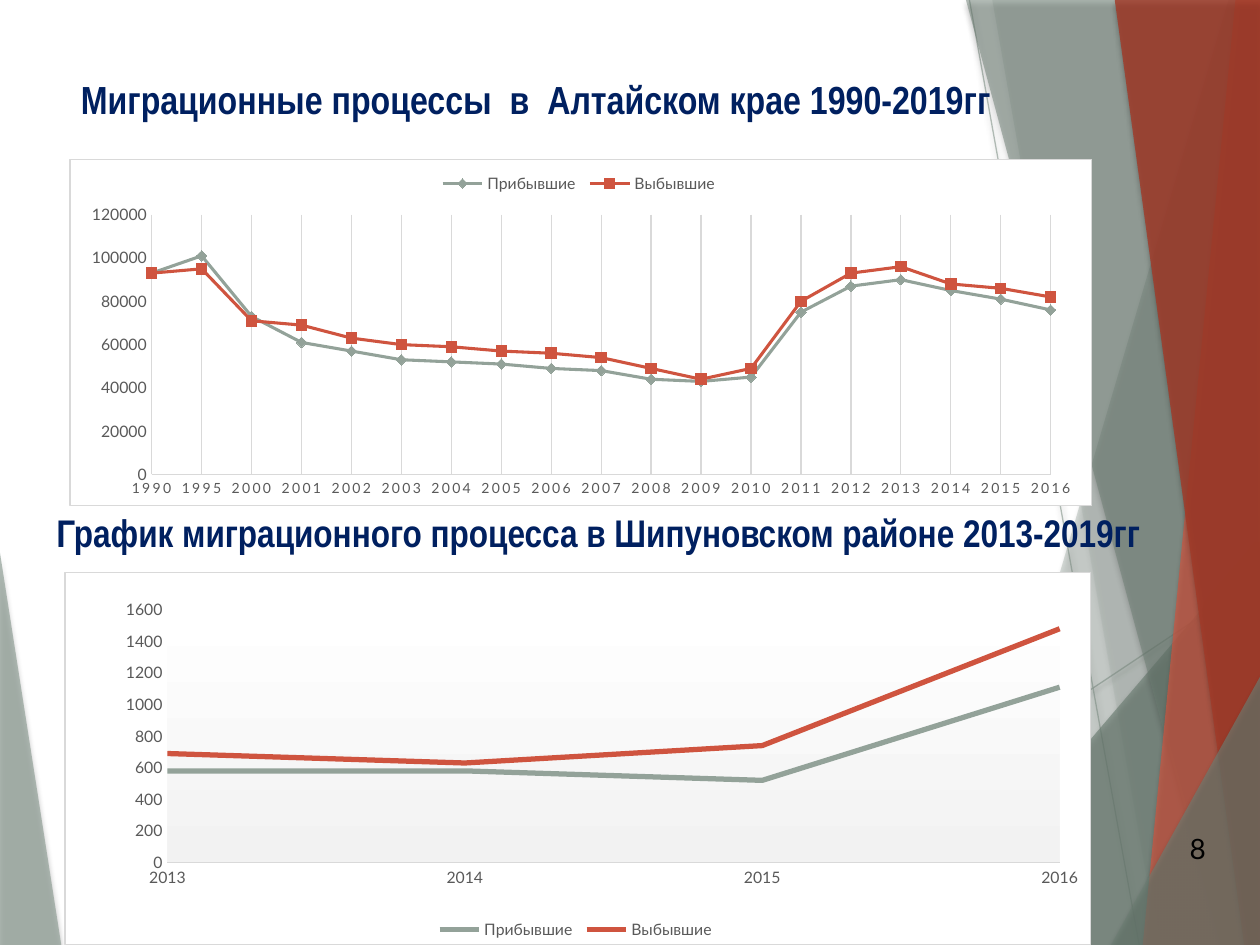
from lxml import etree
from pptx import Presentation
from pptx import util as u
from pptx.chart.data import CategoryChartData
from pptx.dml.color import RGBColor
from pptx.enum import chart as ch, shapes, text
from pptx.oxml import parse_xml
from pptx.oxml.ns import qn

Pt = u.Pt
NS = ('xmlns:a="http://schemas.openxmlformats.org/drawingml/2006/main" '
      'xmlns:c="http://schemas.openxmlformats.org/drawingml/2006/chart"')
SAGE = RGBColor(0x93, 0xA2, 0x99)
MOSS = RGBColor(0x6B, 0x7D, 0x72)
RED = RGBColor(0xCF, 0x54, 0x3F)
RUST = RGBColor(0xA2, 0x3A, 0x28)
NAVY = RGBColor(0x00, 0x20, 0x60)
BLACK = RGBColor(0, 0, 0)
GREY = RGBColor(0x59, 0x59, 0x59)
PALE = RGBColor(0xD9, 0xD9, 0xD9)
FACETS = [
    (SAGE, 70, [(0, 316), (35, 540), (0, 540)]),
    (SAGE, 36, [(702, 0), (543, 540), (721, 540), (721, 0)]),
    (SAGE, 20, [(567, 0), (662, 540), (721, 540), (721, 0)]),
    (MOSS, 66, [(523, 540), (720, 309), (721, 540)]),
    (MOSS, 50, [(552, 0), (698, 540), (721, 540), (721, 0)]),
    (RED, 70, [(706, 0), (653, 540), (721, 540), (720, 0)]),
    (RUST, 82, [(637, 0), (711, 540), (721, 540), (720, 0)]),
    (MOSS, 66, [(635, 540), (721, 385), (721, 540)]),
]
RAYS = [(404, 540, 721, 329), (554, 0, 651, 540)]
REGION = {
    "1990": (93000, 93000), "1995": (101000, 95000), "2000": (73000, 71000),
    "2001": (61000, 69000), "2002": (57000, 63000), "2003": (53000, 60000),
    "2004": (52000, 59000), "2005": (51000, 57000), "2006": (49000, 56000),
    "2007": (48000, 54000), "2008": (44000, 49000), "2009": (43000, 44000),
    "2010": (45000, 49000), "2011": (75000, 80000), "2012": (87000, 93000),
    "2013": (90000, 96000), "2014": (85000, 88000), "2015": (81000, 86000),
    "2016": (76000, 82000),
}
COUNTY = {"2013": (580, 690), "2014": (580, 630),
          "2015": (520, 740), "2016": (1110, 1480)}


def fade(shape, alpha):
    for clr in shape._element.spPr.iter(qn("a:srgbClr")):
        etree.SubElement(clr, qn("a:alpha"), val=str(alpha * 1000))


def shade(shape, alpha, blur, dist):
    spec = (f'<a:effectLst {NS}><a:outerShdw blurRad="{Pt(blur)}" '
            f'dist="{Pt(dist)}" dir="5400000" rotWithShape="0">'
            f'<a:srgbClr val="000000"><a:alpha val="{alpha * 1000}"/>'
            '</a:srgbClr></a:outerShdw></a:effectLst>')
    shape._element.spPr.append(parse_xml(spec))


def facet(slide, color, alpha, pts):
    pen = slide.shapes.build_freeform(*pts[0], scale=Pt(1))
    pen.add_line_segments(pts[1:])
    shape = pen.convert_to_shape()
    shape.fill.solid()
    shape.fill.fore_color.rgb = color
    shape.line.fill.background()
    fade(shape, alpha)
    shade(shape, 35, 3, 2)


def ray(slide, ends):
    line = slide.shapes.add_connector(
        shapes.MSO_CONNECTOR.STRAIGHT, *map(Pt, ends))
    line.line.color.rgb = SAGE
    line.line.width = Pt(0.75)
    fade(line, 70)
    shade(line, 38, 3.1, 1.6)


def label(slide, box, words, size, face, color, bold=False,
          align=text.PP_ALIGN.LEFT, anchor=text.MSO_ANCHOR.TOP):
    frame = slide.shapes.add_textbox(*map(Pt, box)).text_frame
    frame.word_wrap = True
    frame.vertical_anchor = anchor
    para = frame.paragraphs[0]
    para.text = words
    para.alignment = align
    style(para.font, size, color, face)
    para.font.bold = bold


def style(font, size, color=GREY, face="Lato"):
    font.size = Pt(size)
    font.name = face
    font.color.rgb = color


def rule(line):
    line.color.rgb = PALE
    line.width = Pt(0.75)


def frame(chart, area):
    root = chart._chartSpace
    root.insert(1, parse_xml(f'<c:roundedCorners {NS} val="0"/>'))
    root.find(qn("c:chart")).addnext(parse_xml(
        f'<c:spPr {NS}><a:solidFill><a:srgbClr val="FFFFFF"/></a:solidFill>'
        f'<a:ln w="{Pt(0.75)}"><a:solidFill><a:srgbClr val="{PALE}"/>'
        '</a:solidFill></a:ln></c:spPr>'))
    plot = root.find(".//" + qn("c:plotArea"))
    for old in plot.findall(qn("c:layout")):
        plot.remove(old)
    sides = "".join(f'<c:{k} val="{v}"/>' for k, v in zip("xywh", area))
    plot.insert(0, parse_xml(
        f'<c:layout {NS}><c:manualLayout><c:layoutTarget val="inner"/>'
        f'<c:xMode val="edge"/><c:yMode val="edge"/>{sides}'
        '</c:manualLayout></c:layout>'))
    axis = plot.find(qn("c:valAx"))
    for old in axis.findall(qn("c:crossBetween")):
        axis.remove(old)
    axis.find(qn("c:crosses")).addnext(
        parse_xml(f'<c:crossBetween {NS} val="midCat"/>'))
    return plot


def graph(slide, box, table, kind, area, side, width, size):
    data = CategoryChartData()
    data.categories = list(table)
    for name, vals in zip(("Прибывшие ", "Выбывшие "), zip(*table.values())):
        data.add_series(name, vals)
    chart = slide.shapes.add_chart(kind, *map(Pt, box), data).chart
    style(chart.font, 10, BLACK, "Arial")
    chart.has_title = False
    chart.has_legend = True
    chart.legend.position = side
    chart.legend.include_in_layout = False
    style(chart.legend.font, 9)
    for axis, points in ((chart.category_axis, size), (chart.value_axis, 9)):
        axis.major_tick_mark = axis.minor_tick_mark = ch.XL_TICK_MARK.NONE
        axis.has_major_gridlines = False
        style(axis.tick_labels.font, points)
        rule(axis.format.line)
    chart.plots[0].vary_by_categories = False
    for line, color in zip(chart.series, (SAGE, RED)):
        line.smooth = False
        line.format.line.color.rgb = color
        line.format.line.width = Pt(width)
    return chart, frame(chart, area)


def region(slide):
    chart, _ = graph(slide, (39.6, 90.7, 584.6, 198.7), REGION,
                     ch.XL_CHART_TYPE.LINE_MARKERS, (0.08, 0.16, 0.88, 0.75),
                     ch.XL_LEGEND_POSITION.TOP, 1.75, 8)
    axis = chart.category_axis
    axis.has_major_gridlines = True
    rule(axis.major_gridlines.format.line)
    axis.tick_labels.font._element.set("spc", "120")
    marks = (ch.XL_MARKER_STYLE.DIAMOND, ch.XL_MARKER_STYLE.SQUARE)
    for line, mark, color in zip(chart.series, marks, (SAGE, RED)):
        line.marker.style = mark
        line.marker.size = 6
        line.marker.format.fill.solid()
        line.marker.format.fill.fore_color.rgb = color
        line.marker.format.line.color.rgb = color


def county(slide):
    chart, plot = graph(slide, (36.7, 326.9, 586.8, 213.1), COUNTY,
                        ch.XL_CHART_TYPE.LINE, (0.1, 0.1, 0.87, 0.68),
                        ch.XL_LEGEND_POSITION.BOTTOM, 3, 9)
    chart.value_axis.format.line.fill.background()
    plot.append(parse_xml(
        f'<c:spPr {NS}><a:gradFill><a:gsLst>'
        '<a:gs pos="0"><a:srgbClr val="FFFFFF"/></a:gs>'
        '<a:gs pos="100000"><a:srgbClr val="F2F2F2"/></a:gs>'
        '</a:gsLst><a:lin ang="5400000" scaled="0"/></a:gradFill></c:spPr>'))


def main():
    deck = Presentation()
    deck.slide_width, deck.slide_height = Pt(720), Pt(540)
    slide = deck.slides.add_slide(deck.slide_layouts[6])
    facet(slide, *FACETS[0])
    for ends in RAYS:
        ray(slide, ends)
    for item in FACETS[1:]:
        facet(slide, *item)
    mid = text.PP_ALIGN.CENTER
    label(slide, (22.3, 39.6, 573.8, 56.2),
          "Миграционные процессы  в  Алтайском крае 1990-2019гг ",
          22.4, "Arial Narrow", NAVY, True, mid)
    label(slide, (666, 463, 36.7, 43.9), "8", 16, "Lato", BLACK,
          align=mid, anchor=text.MSO_ANCHOR.MIDDLE)
    region(slide)
    county(slide)
    label(slide, (25.2, 287.3, 637.9, 33.8),
          "График миграционного процесса в Шипуновском районе 2013-2019гг",
          22, "Arial Narrow", NAVY, True)
    deck.save("out.pptx")


if __name__ == "__main__":
    main()
